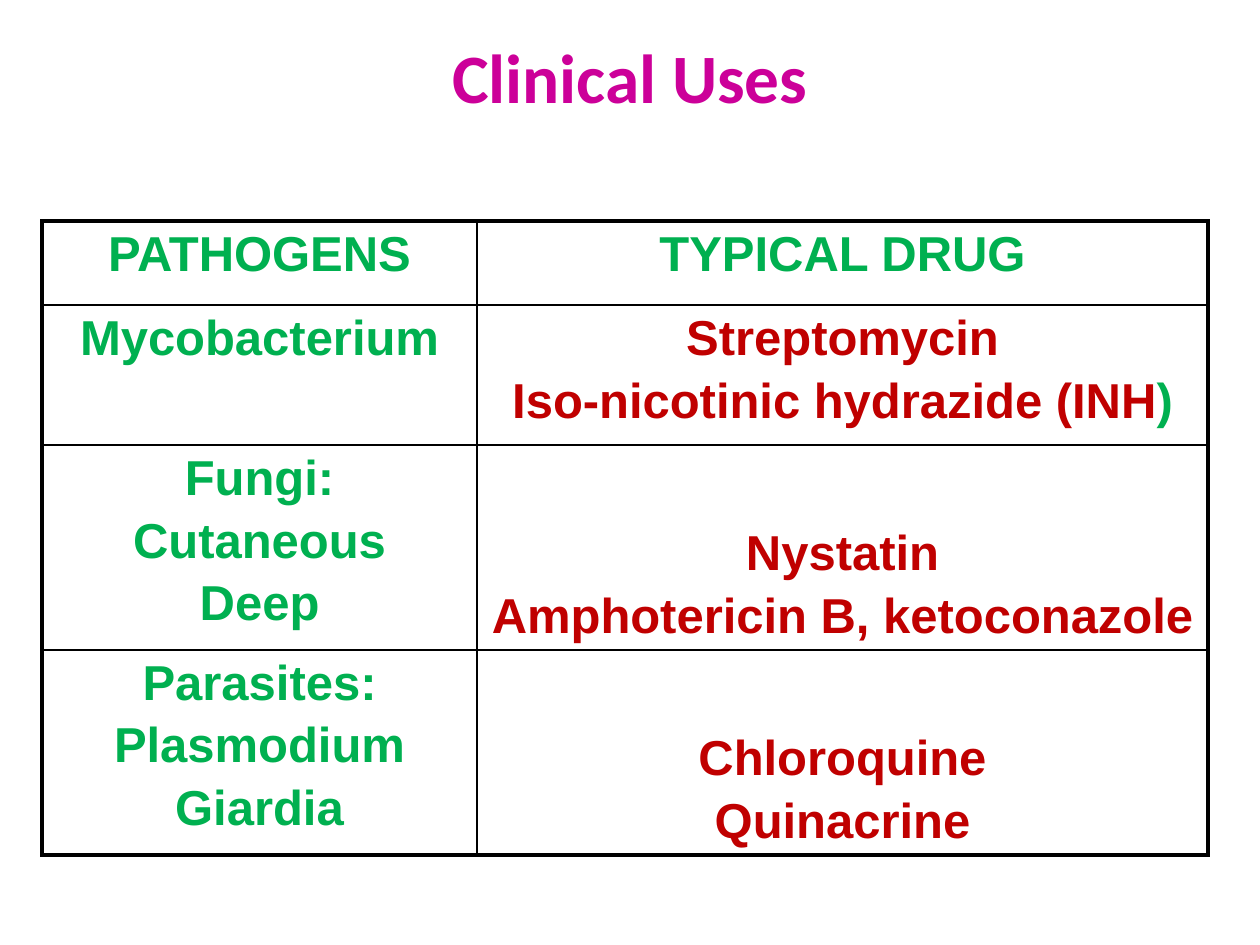
from lxml import etree
from pptx import Presentation
from pptx import util as u
from pptx.dml.color import RGBColor
from pptx.enum import text
from pptx.oxml import ns

EMU_PER_PX = 914400 / 126
GREEN, RED, MAGENTA, BLACK = "00B050", "C00000", "CC0099", "000000"
COLUMN_WIDTHS = [435, 731]
ROW_HEIGHTS = [84, 140, 196, 196]
OUTER_WIDTH, INNER_WIDTH = 2.25, 1
PATHOGENS = [
    "PATHOGENS",
    "Mycobacterium",
    "Fungi:\nCutaneous\nDeep",
    "Parasites:\nPlasmodium\nGiardia",
]
DRUGS = [
    "TYPICAL DRUG",
    "Streptomycin\nIso-nicotinic hydrazide (INH",
    "Nystatin\nAmphotericin B, ketoconazole",
    "Chloroquine\nQuinacrine",
]


def px(length):
    """Turn pixels into EMU."""
    return u.Emu(round(length * EMU_PER_PX))


def color(value):
    """Turn a hex string into a colour."""
    return RGBColor.from_string(value)


def style_run(run, font_name, size, fill):
    """Make a run bold in the given font, size and colour."""
    run.font.name = font_name
    run.font.size = u.Pt(size)
    run.font.bold = True
    run.font.color.rgb = color(fill)


def add_title(slide, words):
    """Add the centred slide title."""
    box = slide.shapes.add_textbox(px(63), px(34), px(1134), px(158))
    frame = box.text_frame
    frame.word_wrap = True
    frame.margin_top = 0
    frame.text = words
    paragraph = frame.paragraphs[0]
    paragraph.alignment = text.PP_ALIGN.CENTER
    style_run(paragraph.runs[0], "Calibri", 39.6, MAGENTA)


def set_borders(cell, widths):
    """Draw black borders with widths for left, right, top and bottom."""
    properties = cell._tc.get_or_add_tcPr()
    for index, (side, width) in enumerate(zip("LRTB", widths)):
        line = etree.Element(ns.qn(f"a:ln{side}"), w=str(u.Pt(width)))
        fill = etree.SubElement(line, ns.qn("a:solidFill"))
        etree.SubElement(fill, ns.qn("a:srgbClr"), val=BLACK)
        properties.insert(index, line)


def write_cell(cell, words, fill, anchor):
    """Write centred lines into an unfilled cell."""
    cell.fill.background()
    cell.vertical_anchor = anchor
    cell.text_frame.text = words
    for index, paragraph in enumerate(cell.text_frame.paragraphs):
        paragraph.alignment = text.PP_ALIGN.CENTER
        paragraph.space_before = u.Pt(4.5 if index else 0)
        for run in paragraph.runs:
            style_run(run, "Arial", 28, fill)


def add_drug_table(slide):
    """Add the table that pairs pathogens with drugs."""
    row_count, column_count = len(ROW_HEIGHTS), len(COLUMN_WIDTHS)
    table = slide.shapes.add_table(
        row_count, column_count, px(42), px(221),
        px(sum(COLUMN_WIDTHS)), px(sum(ROW_HEIGHTS))).table
    table.first_row = table.horz_banding = False
    for column, width in zip(table.columns, COLUMN_WIDTHS):
        column.width = px(width)
    for row, height in zip(table.rows, ROW_HEIGHTS):
        row.height = px(height)
    top, bottom = text.MSO_ANCHOR.TOP, text.MSO_ANCHOR.BOTTOM
    for index, (pathogen, drug) in enumerate(zip(PATHOGENS, DRUGS)):
        write_cell(table.cell(index, 0), pathogen, GREEN, top)
        write_cell(table.cell(index, 1), drug, RED if index else GREEN,
                   bottom if index > 1 else top)
        for column in range(column_count):
            edges = (column == 0, column == column_count - 1,
                     index == 0, index == row_count - 1)
            set_borders(table.cell(index, column),
                        [OUTER_WIDTH if edge else INNER_WIDTH for edge in edges])
    return table


def main():
    """Build and save the slide."""
    presentation = Presentation()
    presentation.slide_width, presentation.slide_height = px(1260), px(945)
    slide = presentation.slides.add_slide(presentation.slide_layouts[6])
    add_title(slide, "Clinical Uses")
    table = add_drug_table(slide)
    bracket = table.cell(1, 1).text_frame.paragraphs[-1].add_run()
    bracket.text = ")"
    style_run(bracket, "Arial", 28, GREEN)
    presentation.save("out.pptx")


if __name__ == "__main__":
    main()
